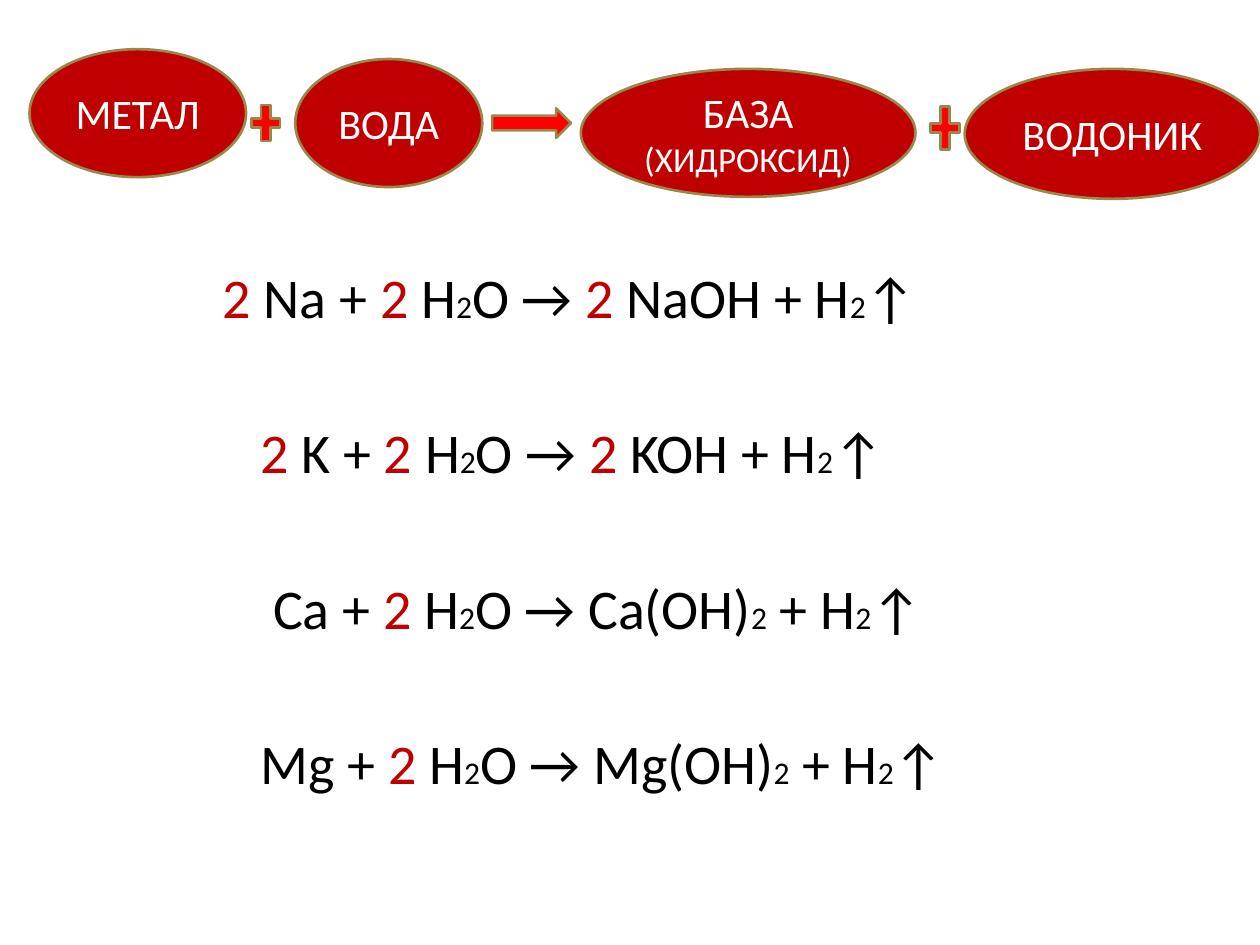
"""Slide on metals reacting with water: a word scheme above four equations."""
from pptx import Presentation, util as u
from pptx.dml.color import RGBColor
from pptx.enum import shapes, text

CRIMSON = RGBColor(0xC0, 0x00, 0x00)
RED = RGBColor(0xFF, 0x00, 0x00)
OLIVE = RGBColor(0x98, 0x89, 0x4B)
WHITE = RGBColor(0xFF, 0xFF, 0xFF)
BLACK = RGBColor(0x00, 0x00, 0x00)

OVAL = shapes.MSO_SHAPE.OVAL
PLUS = shapes.MSO_SHAPE.MATH_PLUS
ARROW = shapes.MSO_SHAPE.RIGHT_ARROW

deck = Presentation()
deck.slide_width, deck.slide_height = u.Inches(10), u.Inches(7.5)
slide = deck.slides.add_slide(deck.slide_layouts[6])
CELL = deck.slide_width / 128


def grid(*cells):
    return [round(cell * CELL) for cell in cells]


def add_run(paragraph, wording, size, color):
    run = paragraph.add_run()
    run.text = wording
    run.font.name = "Calibri"
    run.font.size = u.Pt(size)
    run.font.color.rgb = color


equations = [
    (12, "^2| Na + |^2| H|_2|O → |^2 |NaOH + H|_2|↑"),
    (15, "^2| K + |^2| H|_2|O → |^2| KOH + H|_2|↑"),
    (16, "Ca + |^2| H|_2|O → Ca(OH)|_2| + H|_2|↑"),
    (15, "Mg + |^2| H|_2|O → Mg(OH)|_2| + H|_2|↑"),
]
reactions = slide.shapes.add_textbox(*grid(6, 26, 115, 63)).text_frame
reactions.word_wrap = True
for number, (indent, equation) in enumerate(equations):
    line = reactions.add_paragraph() if number else reactions.paragraphs[0]
    line._p.get_or_add_pPr().set("marL", str(u.Inches(indent / 10)))
    if number:
        line.space_before = u.Pt(50.5)
    for part in equation.split("|"):
        size = 18 if part.startswith("_") else 32
        color = CRIMSON if part.startswith("^") else BLACK
        add_run(line, part.lstrip("^_"), size, color)

scheme = [
    (OVAL, (3, 5, 22, 13), ["МЕТАЛ"]),
    (PLUS, (25, 10, 4, 5), []),
    (OVAL, (30, 6, 19, 13), ["ВОДА"]),
    (ARROW, (50, 11, 8, 3), []),
    (OVAL, (59, 7, 34, 13), ["БАЗА", "(ХИДРОКСИД)"]),
    (PLUS, (94, 10, 4, 6), []),
    (OVAL, (98, 7, 30, 13.2), ["ВОДОНИК"]),
]
for kind, cells, words in scheme:
    term = slide.shapes.add_shape(kind, *grid(*cells))
    term.shadow.inherit = False
    term.fill.solid()
    term.fill.fore_color.rgb = CRIMSON if words else RED
    term.line.color.rgb = OLIVE
    term.line.width = u.Pt(1.5)
    label = term.text_frame
    label.vertical_anchor = text.MSO_ANCHOR.MIDDLE
    for number, word in enumerate(words):
        line = label.add_paragraph() if number else label.paragraphs[0]
        line.alignment = text.PP_ALIGN.CENTER
        add_run(line, word, 20 if number else 24, WHITE)

deck.save("out.pptx")
